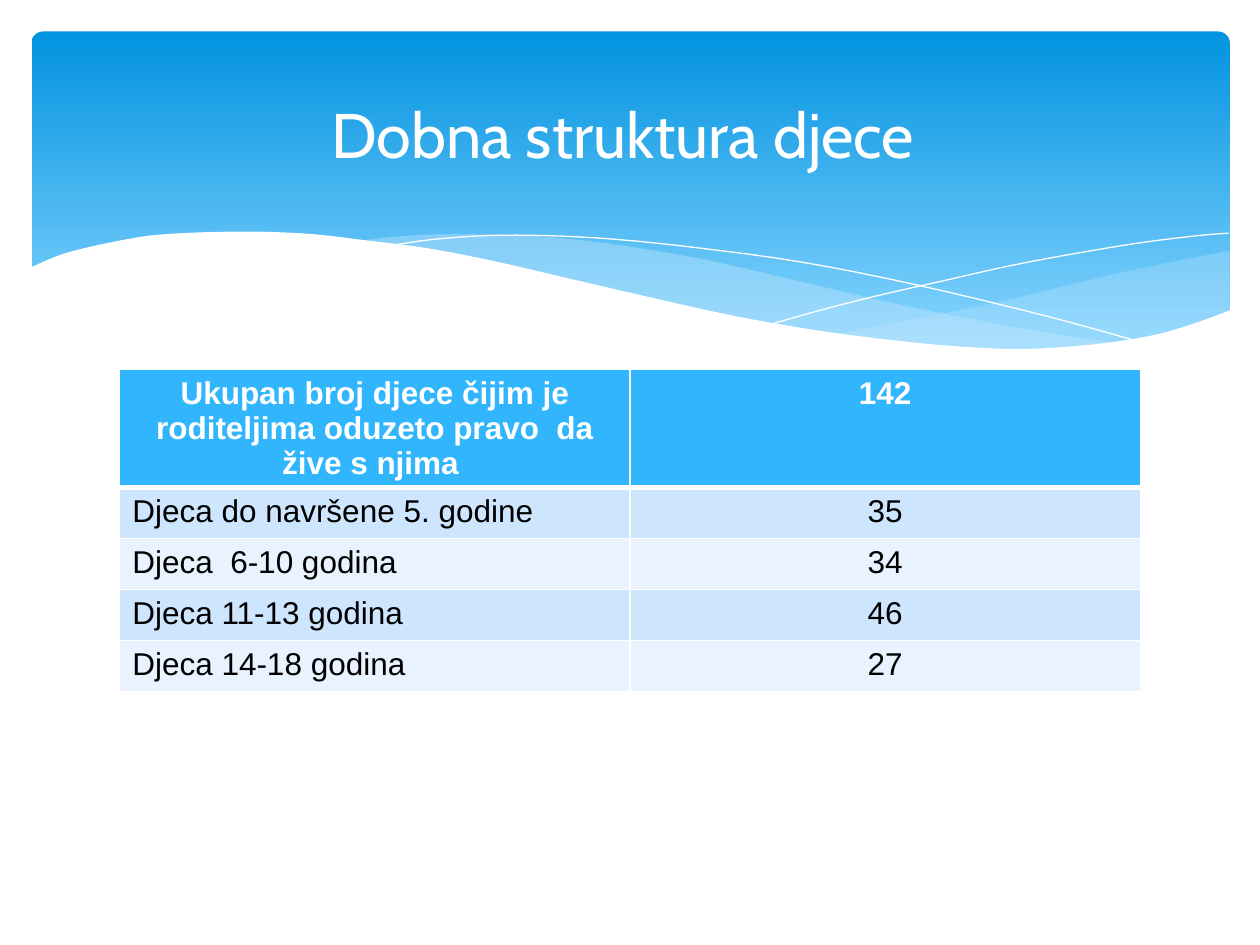
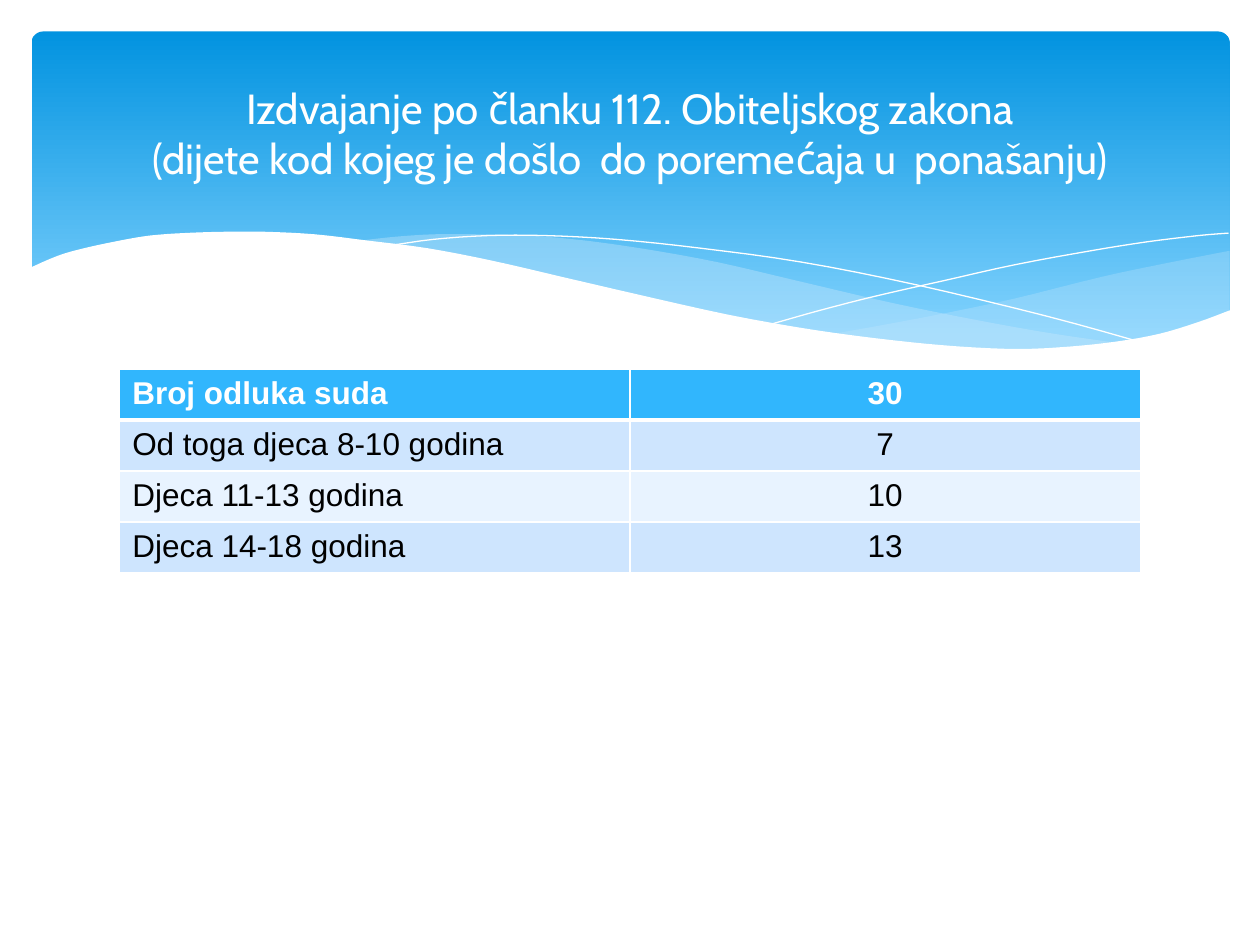
import pptx
import pptx.dml.color
import pptx.enum.shapes
import pptx.enum.text
import pptx.oxml
import pptx.oxml.ns
import pptx.util
from dataclasses import dataclass

Inches = pptx.util.Inches
Pt = pptx.util.Pt
RGB = pptx.dml.color.RGBColor.from_string
MID = pptx.enum.text.MSO_ANCHOR.MIDDLE
LEFT = pptx.enum.text.PP_ALIGN.LEFT
CENTER = pptx.enum.text.PP_ALIGN.CENTER


@dataclass(frozen=True)
class Theme:
    white: str = "FFFFFF"
    black: str = "000000"
    band_top: str = "0293E0"
    band_bottom: str = "83D3FE"
    wave: str = "C6E7FC"
    header: str = "31B6FD"
    rows: tuple = ("CEE5FE", "E8F3FF")
    title_font: str = "Cabin"
    body_font: str = "Arial"
    title_size: int = 36
    long_title_size: int = 24
    body_size: int = 18
    border: int = 1
    header_border: int = 3


RIGHT_WAVE = (
    [(9.76, 1.99), (9.35, 2.07), (8.91, 2.16), (8.61, 2.23), (8.05, 2.37),
     (7.53, 2.48), (7.06, 2.57), (6.61, 2.65)],
    [(6.61, 2.65), (7.05, 2.71), (7.57, 2.76), (8.03, 2.78), (8.44, 2.77),
     (8.81, 2.73), (9.13, 2.67), (9.42, 2.59), (9.76, 2.47)],
)
MIDDLE_WAVE = (
    [(8.93, 2.73), (8.37, 2.65), (7.75, 2.54), (7.06, 2.4), (6.29, 2.22),
     (5.69, 2.08), (5.14, 1.98), (4.65, 1.91), (4.2, 1.87), (3.8, 1.86),
     (3.44, 1.86), (3.13, 1.88), (2.86, 1.91)],
    [(2.86, 1.91), (3.42, 1.99), (4.04, 2.11), (4.49, 2.22), (5.3, 2.4),
     (6.01, 2.55), (6.65, 2.66), (7.22, 2.74), (7.73, 2.77), (8.18, 2.78),
     (8.57, 2.77), (8.93, 2.73)],
)
FALLING_LINE = (
    [(3.09, 1.95), (3.44, 1.9), (3.87, 1.87), (4.33, 1.87), (4.89, 1.9),
     (5.56, 1.97), (6.36, 2.08), (7.27, 2.26), (8.31, 2.51), (9.07, 2.72)],
)
RISING_LINE = (
    [(6.13, 2.57), (6.52, 2.46), (6.95, 2.35), (7.48, 2.23), (8.06, 2.1),
     (8.66, 1.99), (9.1, 1.92), (9.51, 1.87), (9.75, 1.85)],
)
WHITE_EDGE = (
    [(9.77, 2.46), (9.5, 2.56), (9.2, 2.65), (8.87, 2.71), (8.5, 2.75),
     (8.09, 2.77), (7.61, 2.75), (7.08, 2.7), (6.47, 2.62), (5.79, 2.5),
     (5.03, 2.33), (4.47, 2.2), (3.91, 2.07), (3.39, 1.97), (2.92, 1.91),
     (2.5, 1.86), (2.11, 1.84), (1.77, 1.84), (1.46, 1.85), (1.19, 1.87),
     (0.95, 1.91), (0.67, 1.97), (0.46, 2.03), (0.23, 2.13)],
    [(0.23, 3.29), (9.77, 3.29)],
)


def apply(obj, fmt):
    for name, value in fmt.items():
        setattr(obj, name, value)


def smooth(points, steps=4):
    ends = [points[0], *points, points[-1]]
    curve = [points[0]]
    for a, b, c, d in zip(ends, ends[1:], ends[2:], ends[3:]):
        for t in (k / steps for k in range(1, steps + 1)):
            curve.append(tuple(
                (2 * q + (r - p) * t + (2 * p - 5 * q + 4 * r - s) * t ** 2
                 + (3 * q - p - 3 * r + s) * t ** 3) / 2
                for p, q, r, s in zip(a, b, c, d)))
    return curve


class Deck:
    def __init__(self, theme):
        self.theme = theme
        self.prs = pptx.Presentation()
        apply(self.prs, {"slide_width": Inches(10), "slide_height": Inches(7.5)})
        self.slide = None

    def new_slide(self):
        self.slide = self.prs.slides.add_slide(self.prs.slide_layouts[6])
        self.band()

    def band(self):
        th = self.theme
        sp = self.slide.shapes.add_shape(
            pptx.enum.shapes.MSO_SHAPE.ROUNDED_RECTANGLE,
            Inches(0.25), Inches(0.25), Inches(9.51), Inches(2.7))
        sp.shadow.inherit = False
        sp.adjustments[0] = 0.034
        sp.line.fill.background()
        sp.fill.gradient()
        sp.fill.gradient_angle = 270
        stops = ((0, th.band_top), (0.9, th.band_bottom))
        for stop, (position, color) in zip(sp.fill.gradient_stops, stops):
            stop.color.rgb = RGB(color)
            stop.position = position
        self.wave(RIGHT_WAVE, th.wave, 29)
        self.wave(MIDDLE_WAVE, th.wave, 40)
        self.curve(FALLING_LINE)
        self.curve(RISING_LINE)
        self.wave(WHITE_EDGE, th.white)

    def outline(self, edges, close):
        points = [(Inches(x), Inches(y)) for edge in edges for x, y in smooth(edge)]
        builder = self.slide.shapes.build_freeform(*points[0])
        builder.add_line_segments(points[1:], close=close)
        sp = builder.convert_to_shape()
        sp.shadow.inherit = False
        return sp

    def wave(self, edges, color, opacity=100):
        sp = self.outline(edges, True)
        sp.line.fill.background()
        sp.fill.solid()
        sp.fill.fore_color.rgb = RGB(color)
        if opacity < 100:
            clr = sp.fill._xPr.find(".//" + pptx.oxml.ns.qn("a:srgbClr"))
            clr.append(pptx.oxml.parse_xml(
                f'<a:alpha {pptx.oxml.ns.nsdecls("a")} val="{opacity * 1000}"/>'))

    def curve(self, edges):
        sp = self.outline(edges, False)
        sp.fill.background()
        sp.line.color.rgb = RGB(self.theme.white)
        sp.line.width = Pt(0)

    def text(self, tf, text, color, align, fmt):
        p = tf.paragraphs[0]
        p.alignment = align
        for i, line in enumerate(text.split("\n")):
            if i:
                p.add_line_break()
            r = p.add_run()
            r.text = line
            apply(r.font, fmt)
            r.font.color.rgb = RGB(color)

    def title(self, text, size):
        sp = self.slide.shapes.add_textbox(
            Inches(0.5), Inches(0.37), Inches(9), Inches(1.37))
        tf = sp.text_frame
        apply(tf, {"word_wrap": True, "vertical_anchor": MID})
        self.text(tf, text, self.theme.white, CENTER,
                  {"name": self.theme.title_font, "size": Pt(size)})

    def borders(self, cell, top, bottom):
        widths = {"L": self.theme.border, "R": self.theme.border,
                  "T": top, "B": bottom}
        tc_pr = cell._tc.get_or_add_tcPr()
        for i, (side, width) in enumerate(widths.items()):
            tc_pr.insert(i, pptx.oxml.parse_xml(
                f'<a:ln{side} {pptx.oxml.ns.nsdecls("a")} w="{Pt(width)}">'
                f'<a:solidFill><a:srgbClr val="{self.theme.white}"/></a:solidFill>'
                f'</a:ln{side}>'))

    def table(self, data, header_align=LEFT):
        th = self.theme
        row_height = Inches(1.62 / 4)
        tbl = self.slide.shapes.add_table(
            len(data), 2, Inches(0.95), Inches(2.93),
            Inches(8.1), row_height * len(data)).table
        for i, row in enumerate(data):
            tbl.rows[i].height = row_height
            head = i == 0
            fill = th.header if head else th.rows[(i - 1) % 2]
            top = th.header_border if i == 1 else th.border
            bottom = th.header_border if head else th.border
            aligns = (header_align if head else LEFT, CENTER)
            for j, (text, align) in enumerate(zip(row, aligns)):
                cell = tbl.cell(i, j)
                cell.fill.solid()
                cell.fill.fore_color.rgb = RGB(fill)
                self.borders(cell, top, bottom)
                self.text(cell.text_frame, text, th.white if head else th.black, align,
                          {"name": th.body_font, "size": Pt(th.body_size), "bold": head})


def main():
    theme = Theme()
    deck = Deck(theme)

    deck.new_slide()
    deck.table([
        ("Ukupan broj djece čijim je roditeljima oduzeto pravo  da žive s njima ", "142"),
        ("Djeca do navršene 5. godine", "35"),
        ("Djeca  6-10 godina", "34"),
        ("Djeca 11-13 godina", "46"),
        ("Djeca 14-18 godina", "27"),
    ], header_align=CENTER)
    deck.title("Dobna struktura djece ", theme.title_size)

    deck.new_slide()
    deck.table([
        ("Broj odluka suda", "30"),
        ("Od toga djeca 8-10 godina", "7"),
        ("Djeca 11-13 godina", "10"),
        ("Djeca 14-18 godina", "13"),
    ])
    deck.title("Izdvajanje po članku 112. Obiteljskog zakona\n"
               "(dijete kod kojeg je došlo  do poremećaja u  ponašanju)",
               theme.long_title_size)

    deck.prs.save("out.pptx")


if __name__ == "__main__":
    main()
